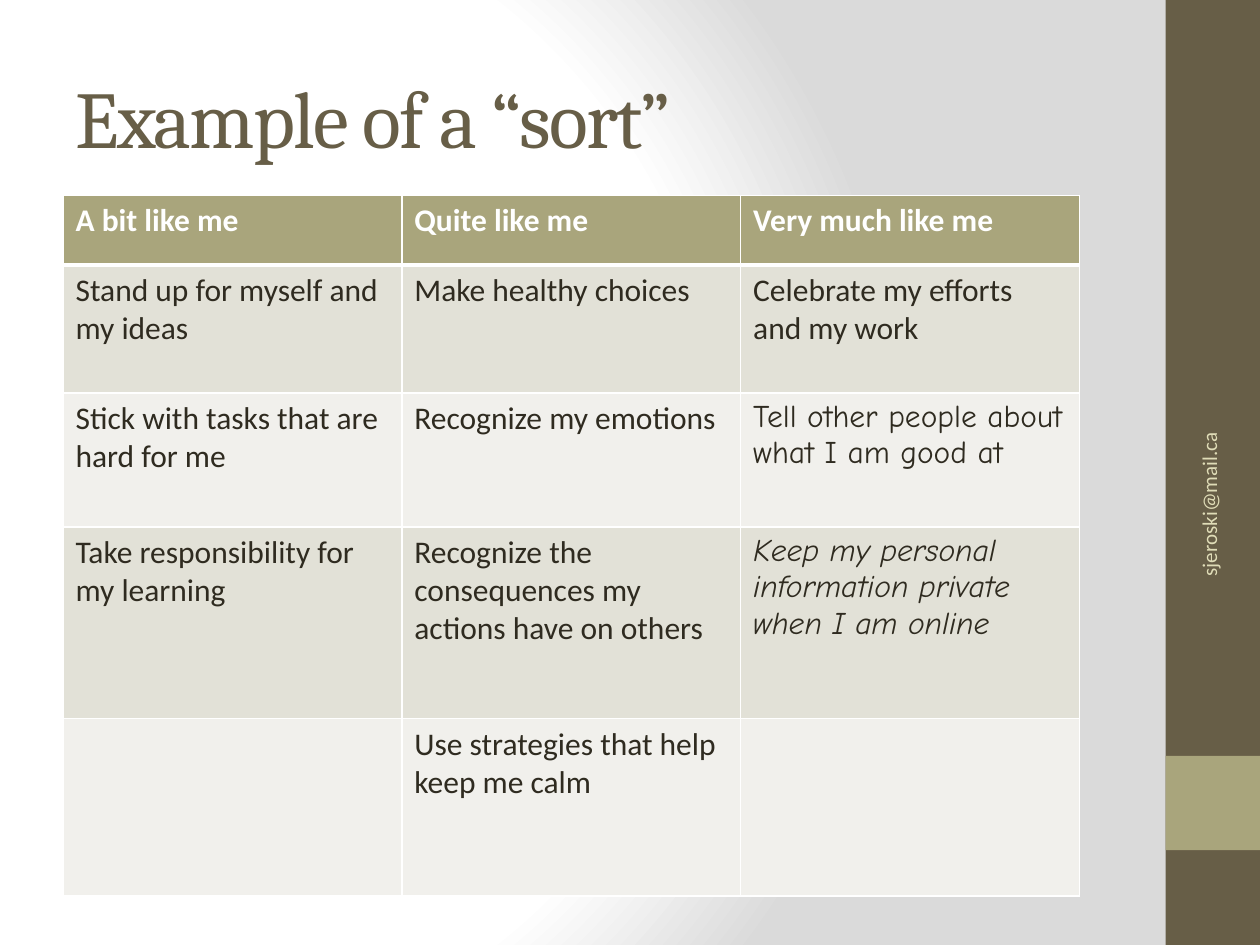
"""Build the slide that shows an example of a sort as a three-column table."""
import pptx
import pptx.dml.color
import pptx.enum.shapes
import pptx.enum.text
import pptx.oxml
import pptx.oxml.ns
import pptx.util
from pptx.util import Cm

RGBColor = pptx.dml.color.RGBColor
BROWN = RGBColor(0x67, 0x5E, 0x47)
OLIVE = RGBColor(0xA9, 0xA5, 0x7C)
CREAM = RGBColor(0xDF, 0xDC, 0xB7)
INK = RGBColor(0x2F, 0x2B, 0x20)
WHITE = RGBColor(0xFF, 0xFF, 0xFF)
GREY = RGBColor(0xDA, 0xDA, 0xDA)
BANDS = (RGBColor(0xE2, 0xE1, 0xD7), RGBColor(0xF1, 0xF0, 0xEC))

SORT_ROWS = (
    ("A bit like me", "Quite like me", "Very much like me"),
    ("Stand up for myself and my ideas", "Make healthy choices",
     "Celebrate my efforts and my work"),
    ("Stick with tasks that are hard for me", "Recognize my emotions",
     "Tell other people about what I am good at"),
    ("Take responsibility for my learning",
     "Recognize the consequences my actions have on others",
     "Keep my personal information private when I am online"),
    ("", "Use strategies that help keep me calm", ""),
)
ROW_HEIGHTS = (1.4, 2.58, 2.7, 3.87, 3.57)
COLUMN_WIDTH = 6.83
HANDWRITTEN = {(2, 2), (3, 2)}
ITALIC = {(3, 2)}


def set_background(slide):
    """Fill the background with a circular gradient from white to grey."""
    stops = "".join(
        f'<a:gs pos="{percent * 1000}"><a:srgbClr val="{color}"/></a:gs>'
        for percent, color in ((0, WHITE), (75, WHITE), (100, GREY)))
    background = pptx.oxml.parse_xml(
        f'<p:bg {pptx.oxml.ns.nsdecls("p", "a")}><p:bgPr>'
        f'<a:gradFill rotWithShape="1"><a:gsLst>{stops}</a:gsLst>'
        '<a:path path="circle">'
        '<a:fillToRect l="20000" t="50000" r="100000" b="50000"/>'
        '</a:path></a:gradFill><a:effectLst/></p:bgPr></p:bg>')
    slide.element.cSld.insert(0, background)


def style_font(paragraph, face, size, color, bold=False, italic=False):
    """Set the font of a whole paragraph."""
    font = paragraph.font
    font.name = face
    font.size = pptx.util.Pt(size)
    font.bold = bold
    font.italic = italic
    font.color.rgb = color


def add_band(slide, top, height, color):
    """Add a plain block to the right-hand sidebar."""
    band = slide.shapes.add_shape(
        pptx.enum.shapes.MSO_SHAPE.RECTANGLE,
        Cm(23.5), Cm(top), Cm(1.9), Cm(height))
    band.shadow.inherit = False
    band.fill.solid()
    band.fill.fore_color.rgb = color
    band.line.fill.background()


def set_title(slide, text):
    """Place and format the title."""
    title = slide.shapes.title
    title.left, title.top = Cm(1.27), Cm(0.76)
    title.width, title.height = Cm(21.16), Cm(3.18)
    frame = title.text_frame
    frame.text = text
    frame.auto_size = pptx.enum.text.MSO_AUTO_SIZE.NONE
    frame.vertical_anchor = pptx.enum.text.MSO_ANCHOR.MIDDLE
    heading = frame.paragraphs[0]
    heading.alignment = pptx.enum.text.PP_ALIGN.LEFT
    style_font(heading, "Cambria", 46, BROWN)
    heading.runs[0]._r.get_or_add_rPr().set("spc", "-100")


def set_borders(cell, bottom_width):
    """Draw white rules around a cell."""
    properties = cell._tc.get_or_add_tcPr()
    for side, width in (("L", 1), ("R", 1), ("T", 1), ("B", bottom_width)):
        properties.append(pptx.oxml.parse_xml(
            f'<a:ln{side} {pptx.oxml.ns.nsdecls("a")} '
            f'w="{pptx.util.Pt(width)}"><a:solidFill>'
            f'<a:srgbClr val="{WHITE}"/></a:solidFill></a:ln{side}>'))


def fill_cell(cell, row, column, text):
    """Write and format one cell of the sort."""
    header = row == 0
    cell.text = text
    face = "Comic Neue" if (row, column) in HANDWRITTEN else "Calibri"
    style_font(cell.text_frame.paragraphs[0], face, 18,
               WHITE if header else INK, header, (row, column) in ITALIC)
    top_rule = {0: 3}
    set_borders(cell, top_rule.get(row, 1))
    if row == 1:
        cell._tc.tcPr.find(pptx.oxml.ns.qn("a:lnT")).set(
            "w", str(pptx.util.Pt(3)))
    cell.fill.solid()
    cell.fill.fore_color.rgb = OLIVE if header else BANDS[(row - 1) % 2]


def add_sort_table(slide):
    """Add the table of statements."""
    columns = len(SORT_ROWS[0])
    table = slide.shapes.add_table(
        len(SORT_ROWS), columns, Cm(1.27), Cm(3.94),
        Cm(COLUMN_WIDTH * columns), Cm(sum(ROW_HEIGHTS))).table
    for column in table.columns:
        column.width = Cm(COLUMN_WIDTH)
    for row, (statements, height) in enumerate(zip(SORT_ROWS, ROW_HEIGHTS)):
        table.rows[row].height = Cm(height)
        for column, text in enumerate(statements):
            fill_cell(table.cell(row, column), row, column, text)


def add_contact(slide, address):
    """Add the address that runs up the sidebar."""
    contact = slide.shapes.add_textbox(
        Cm(21.08), Cm(11.25), Cm(6.58), Cm(1.02))
    contact.rotation = 270
    frame = contact.text_frame
    frame.word_wrap = True
    frame.vertical_anchor = pptx.enum.text.MSO_ANCHOR.MIDDLE
    frame.text = address
    frame.paragraphs[0].alignment = pptx.enum.text.PP_ALIGN.RIGHT
    style_font(frame.paragraphs[0], "Calibri", 12, CREAM)


def main():
    """Build and save the presentation."""
    presentation = pptx.Presentation()
    presentation.slide_width = Cm(25.4)
    presentation.slide_height = Cm(19.05)
    slide = presentation.slides.add_slide(presentation.slide_layouts[5])
    set_background(slide)
    add_band(slide, 0, 19.05, BROWN)
    add_band(slide, 15.24, 1.9, OLIVE)
    set_title(slide, "Example of a “sort”")
    add_sort_table(slide)
    add_contact(slide, "sjeroski@mail.ca")
    presentation.save("out.pptx")


if __name__ == "__main__":
    main()
